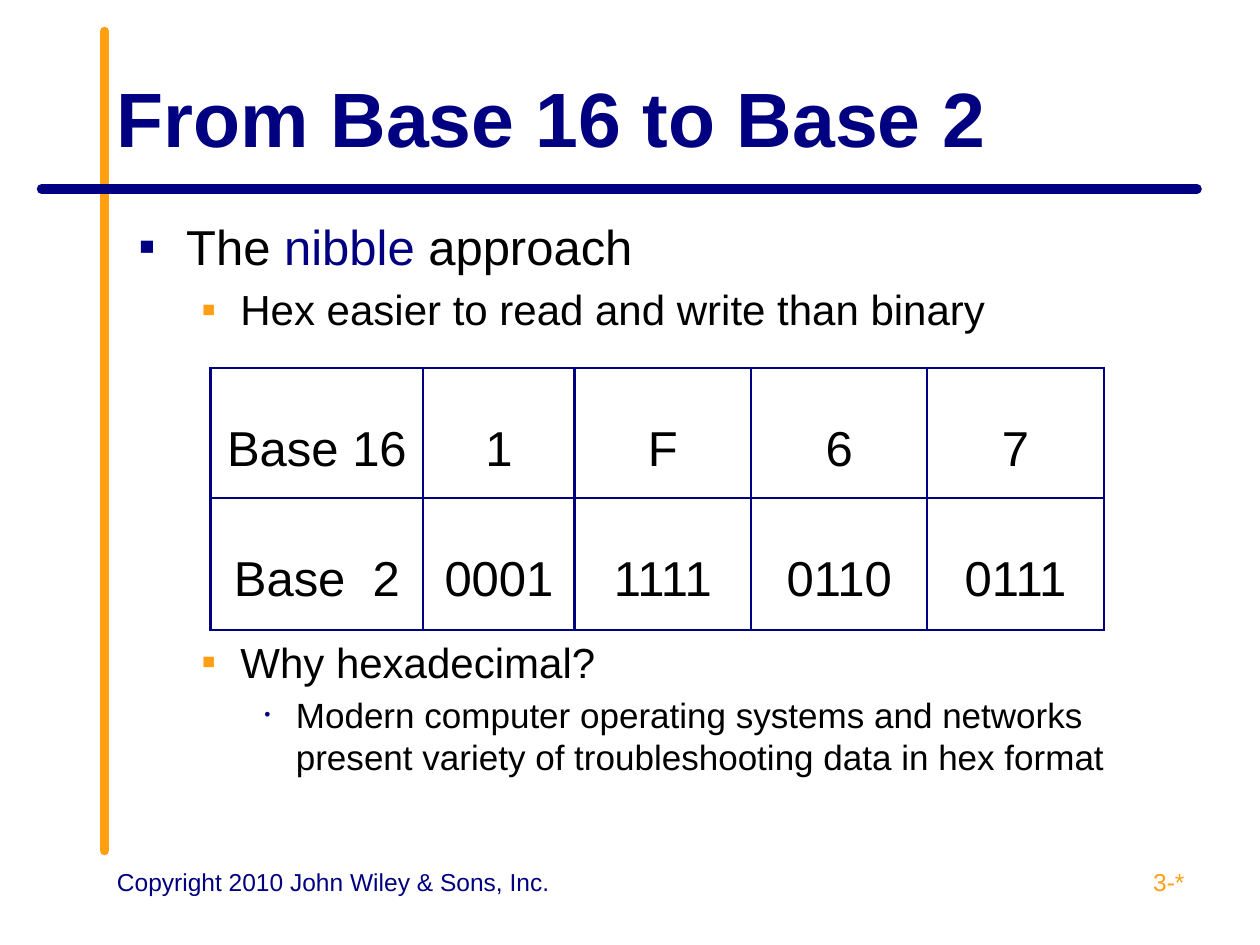
from lxml.etree import SubElement
from pptx import Presentation
from pptx.dml.color import RGBColor
from pptx.enum.shapes import MSO_CONNECTOR
from pptx.enum.text import MSO_ANCHOR, PP_ALIGN
from pptx.oxml.ns import qn
from pptx.util import Inches, Pt

NAVY, ORANGE, BLACK = "000080", "FF9F11", "000000"
# Outline levels: text size, left margin, hanging indent, bullet, bullet colour, bullet percent
LEVELS = [
    (28, 0.38, 0.38, "▪", NAVY, 100),
    (24, 0.81, 0.31, "▪", ORANGE, 100),
    (20, 1.25, 0.25, "•", NAVY, 50),
]


def colour(hex_string):
    return RGBColor.from_string(hex_string)


class SlideBuilder:
    font_name = "Arial"

    def __init__(self, slide):
        self.slide = slide

    def style(self, font, size, hex_string, bold=False):
        font.name = self.font_name
        font.size = Pt(size)
        font.bold = bold
        font.color.rgb = colour(hex_string)

    def rule(self, x1, y1, x2, y2, hex_string):
        line = self.slide.shapes.add_connector(
            MSO_CONNECTOR.STRAIGHT, Inches(x1), Inches(y1), Inches(x2), Inches(y2))
        line.line.color.rgb = colour(hex_string)
        line.line.width = Pt(5.5)
        line.line._get_or_add_ln().set("cap", "rnd")
        SubElement(line._element.spPr, qn("a:effectLst"))

    def frame(self, left, top, width, height, anchor=MSO_ANCHOR.TOP):
        box = self.slide.shapes.add_textbox(
            Inches(left), Inches(top), Inches(width), Inches(height))
        box.text_frame.word_wrap = True
        box.text_frame.vertical_anchor = anchor
        return box.text_frame

    def text(self, words, place, size, hex_string, bold=False,
             align=PP_ALIGN.LEFT, anchor=MSO_ANCHOR.TOP):
        para = self.frame(*place, anchor).paragraphs[0]
        para.alignment = align
        self.style(para.font, size, hex_string, bold)
        para.add_run().text = words

    def outline(self, place, items):
        """Each item is a level and its spans; a span is words and a colour."""
        frame = self.frame(*place)
        for index, (level, spans) in enumerate(items):
            size, margin, hanging, bullet, bullet_colour, percent = LEVELS[level]
            para = frame.paragraphs[0] if index == 0 else frame.add_paragraph()
            para.level = level
            if index:
                para.space_before = Pt(size * 0.2)
            properties = para._p.get_or_add_pPr()
            properties.set("marL", str(Inches(margin)))
            properties.set("indent", str(-Inches(hanging)))
            bullet_fill = SubElement(properties, qn("a:buClr"))
            SubElement(bullet_fill, qn("a:srgbClr"), val=bullet_colour)
            SubElement(properties, qn("a:buSzPct"), val=str(percent * 1000))
            SubElement(properties, qn("a:buFont"), typeface=self.font_name)
            SubElement(properties, qn("a:buChar"), char=bullet)
            self.style(para.font, size, BLACK)
            for words, hex_string in spans:
                span = para.add_run()
                span.text = words
                if hex_string != BLACK:
                    span.font.color.rgb = colour(hex_string)

    def borders(self, cell, hex_string, width):
        properties = cell._tc.get_or_add_tcPr()
        for side in ("lnL", "lnR", "lnT", "lnB"):
            line = SubElement(properties, qn(f"a:{side}"), w=str(Pt(width)))
            fill = SubElement(line, qn("a:solidFill"))
            SubElement(fill, qn("a:srgbClr"), val=hex_string)

    def table(self, left, top, widths, heights, rows):
        table = self.slide.shapes.add_table(
            len(heights), len(widths), Inches(left), Inches(top),
            Inches(sum(widths)), Inches(sum(heights))).table
        table.first_row = table.horz_banding = False
        for column, width in zip(table.columns, widths):
            column.width = Inches(width)
        for row, height, values in zip(table.rows, heights, rows):
            row.height = Inches(height)
            for cell, value in zip(row.cells, values):
                cell.margin_left = cell.margin_right = 0
                cell.margin_top = cell.margin_bottom = 0
                self.borders(cell, NAVY, 1.5)
                cell.fill.background()
                para = cell.text_frame.paragraphs[0]
                para.alignment = PP_ALIGN.CENTER
                para.line_spacing = 2.0
                self.style(para.font, 28, BLACK)
                para.add_run().text = value


def main():
    deck = Presentation()
    deck.slide_width, deck.slide_height = Inches(10), Inches(7.5)
    page = SlideBuilder(deck.slides.add_slide(deck.slide_layouts[6]))

    # Crossing rules
    page.rule(0.83, 6.75, 0.83, 0.25, ORANGE)
    page.rule(9.5, 1.5, 0.33, 1.5, NAVY)

    # Title
    page.text("From Base 16 to Base 2", (0.83, 0.3, 8.67, 1.25), 44, NAVY,
              bold=True, anchor=MSO_ANCHOR.MIDDLE)

    # Outline above and below the table
    page.outline((1, 1.67, 8.33, 1.1), [
        (0, [("The ", BLACK), ("nibble", NAVY), (" approach", BLACK)]),
        (1, [("Hex easier to read and write than binary", BLACK)]),
    ])
    page.outline((1, 5, 8.33, 1.3), [
        (1, [("Why hexadecimal?", BLACK)]),
        (2, [("Modern computer operating systems and networks present "
              "variety of troubleshooting data in hex format", BLACK)]),
    ])

    # Digits and their nibbles
    page.table(1.67, 2.92, [1.69, 1.2, 1.4, 1.4, 1.4], [1.03, 1.05], [
        ["Base 16", "1", "F", "6", "7"],
        ["Base  2", "0001", "1111", "0110", "0111"],
    ])

    # Footer
    page.text("3-*", (7.17, 6.83, 2.33, 0.52), 14, ORANGE, align=PP_ALIGN.RIGHT)
    page.text("Copyright 2010 John Wiley & Sons, Inc.", (0.83, 6.83, 3.67, 0.52), 14, NAVY)

    deck.save("out.pptx")


if __name__ == "__main__":
    main()
